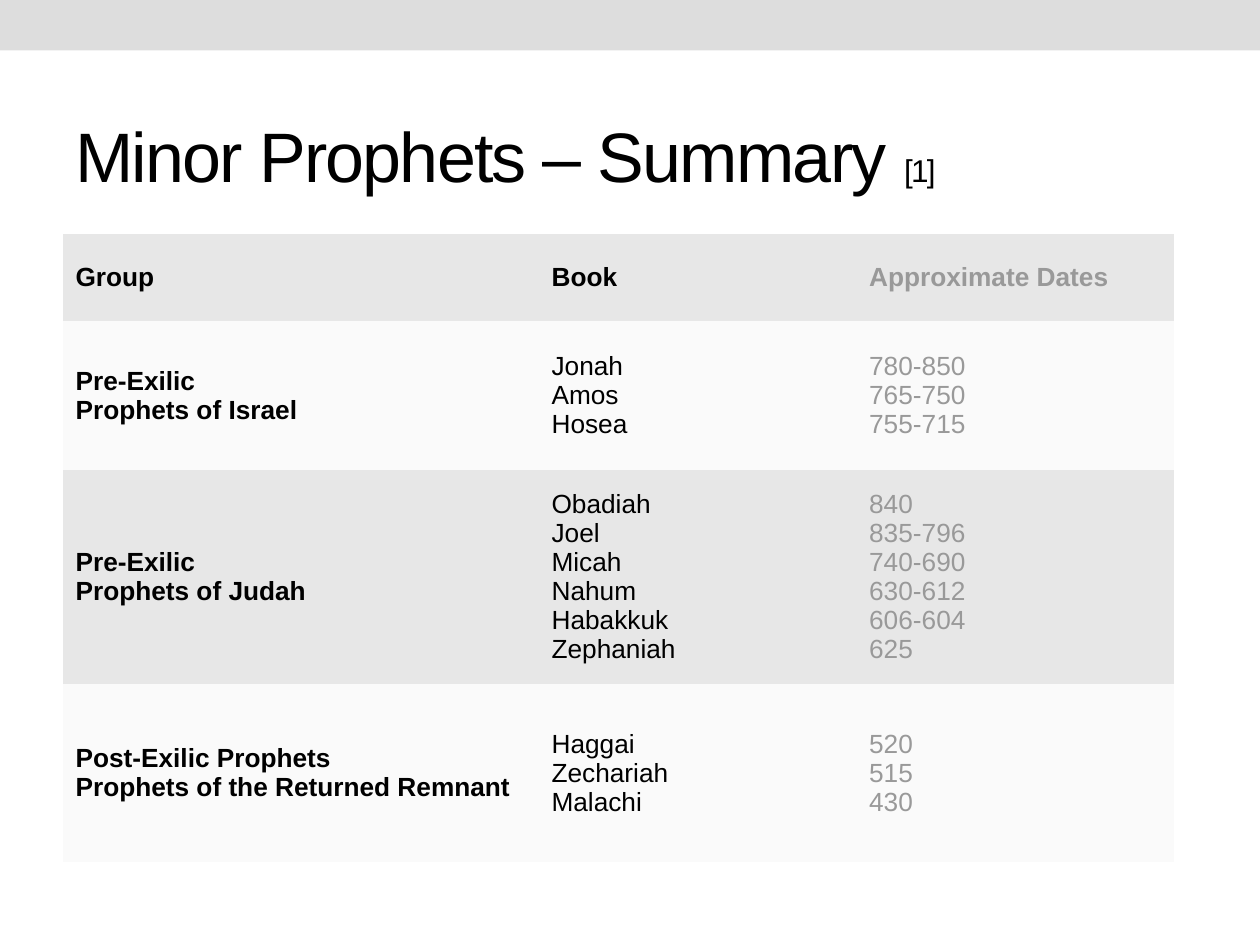
import pptx
import pptx.dml.color
import pptx.enum.shapes
import pptx.enum.text
import pptx.oxml.ns
import pptx.util
import lxml.etree
from dataclasses import dataclass

Pt = pptx.util.Pt
Anchor = pptx.enum.text.MSO_ANCHOR


@dataclass(frozen=True)
class Theme:
    font: str = "Arial"
    ink: str = "000000"
    muted: str = "999999"
    bar: str = "DDDDDD"
    dark: str = "E7E7E7"
    light: str = "FAFAFA"
    title: float = 40
    note: float = 18
    body: float = 15


THEME = Theme()

COLS = [272, 181.5, 181.5]
ROWS = [49.7, 84.8, 119.8, 102]
HEAD = ["Group", "Book", "Approximate Dates"]
GROUPS = [
    (["Pre-Exilic", "Prophets of Israel"],
     [("Jonah", "780-850"), ("Amos", "765-750"), ("Hosea", "755-715")]),
    (["Pre-Exilic", "Prophets of Judah"],
     [("Obadiah", "840"), ("Joel", "835-796"), ("Micah", "740-690"),
      ("Nahum", "630-612"), ("Habakkuk", "606-604"), ("Zephaniah", "625")]),
    (["Post-Exilic Prophets", "Prophets of the Returned Remnant"],
     [("Haggai", "520"), ("Zechariah", "515"), ("Malachi", "430")]),
]


def paint(fill, tone):
    fill.solid()
    fill.fore_color.rgb = pptx.dml.color.RGBColor.from_string(tone)


def add_run(para, text, size, tone=THEME.ink, bold=False):
    run = para.add_run()
    run.text = text
    run.font.name = THEME.font
    run.font.size = Pt(size)
    run.font.bold = bold
    paint(run.font.fill, tone)
    return run


def add_bar(slide, width, height):
    bar = slide.shapes.add_shape(
        pptx.enum.shapes.MSO_SHAPE.RECTANGLE, 0, 0, width, height)
    bar.shadow.inherit = False
    paint(bar.fill, THEME.bar)
    bar.line.fill.background()


def add_title(slide, text, note):
    box = slide.shapes.add_textbox(Pt(36), Pt(49), Pt(648), Pt(78))
    frame = box.text_frame
    frame.word_wrap = True
    frame.vertical_anchor = Anchor.MIDDLE
    para = frame.paragraphs[0]
    for part, size in ((text, THEME.title), (note, THEME.note)):
        run = add_run(para, part, size)
        # Tighten the letters by one point
        run.font._element.set("spc", "-100")


def clear_edges(cell):
    props = cell._tc.get_or_add_tcPr()
    for side in ("a:lnL", "a:lnR", "a:lnT", "a:lnB"):
        edge = lxml.etree.SubElement(props, pptx.oxml.ns.qn(side), w="0")
        lxml.etree.SubElement(edge, pptx.oxml.ns.qn("a:noFill"))


def fill_cell(cell, lines, back, tone, bold, split):
    """Set lines as paragraphs if split, else with line breaks."""
    clear_edges(cell)
    paint(cell.fill, back)
    cell.vertical_anchor = Anchor.MIDDLE
    cell.margin_left = cell.margin_right = Pt(7.2)
    cell.margin_top = cell.margin_bottom = Pt(7.2)
    frame = cell.text_frame
    para = frame.paragraphs[0]
    for i, line in enumerate(lines):
        if i and split:
            para = frame.add_paragraph()
        elif i:
            para.add_line_break()
        add_run(para, line, THEME.body, tone, bold)


def add_grid(slide):
    grid = slide.shapes.add_table(
        len(ROWS), len(COLS), Pt(36), Pt(133.9),
        Pt(sum(COLS)), Pt(sum(ROWS))).table
    grid.first_row = grid.horz_banding = False
    for col, width in zip(grid.columns, COLS):
        col.width = Pt(width)
    for row, height in zip(grid.rows, ROWS):
        row.height = Pt(height)

    # Each row holds one list of lines per column
    rows = [[[name] for name in HEAD]]
    rows += [[group, *zip(*books)] for group, books in GROUPS]
    for r, row in enumerate(rows):
        back = THEME.light if r % 2 else THEME.dark
        for c, lines in enumerate(row):
            tone = THEME.muted if c == 2 else THEME.ink
            fill_cell(grid.cell(r, c), lines, back, tone,
                      bold=r == 0 or c == 0, split=c == 0)


def main():
    deck = pptx.Presentation()
    deck.slide_width, deck.slide_height = Pt(720), Pt(540)
    slide = deck.slides.add_slide(deck.slide_layouts[6])
    # Top band, heading, table
    add_bar(slide, deck.slide_width, Pt(28.8))
    add_title(slide, "Minor Prophets – Summary ", "[1]")
    add_grid(slide)
    deck.save("out.pptx")


if __name__ == "__main__":
    main()
